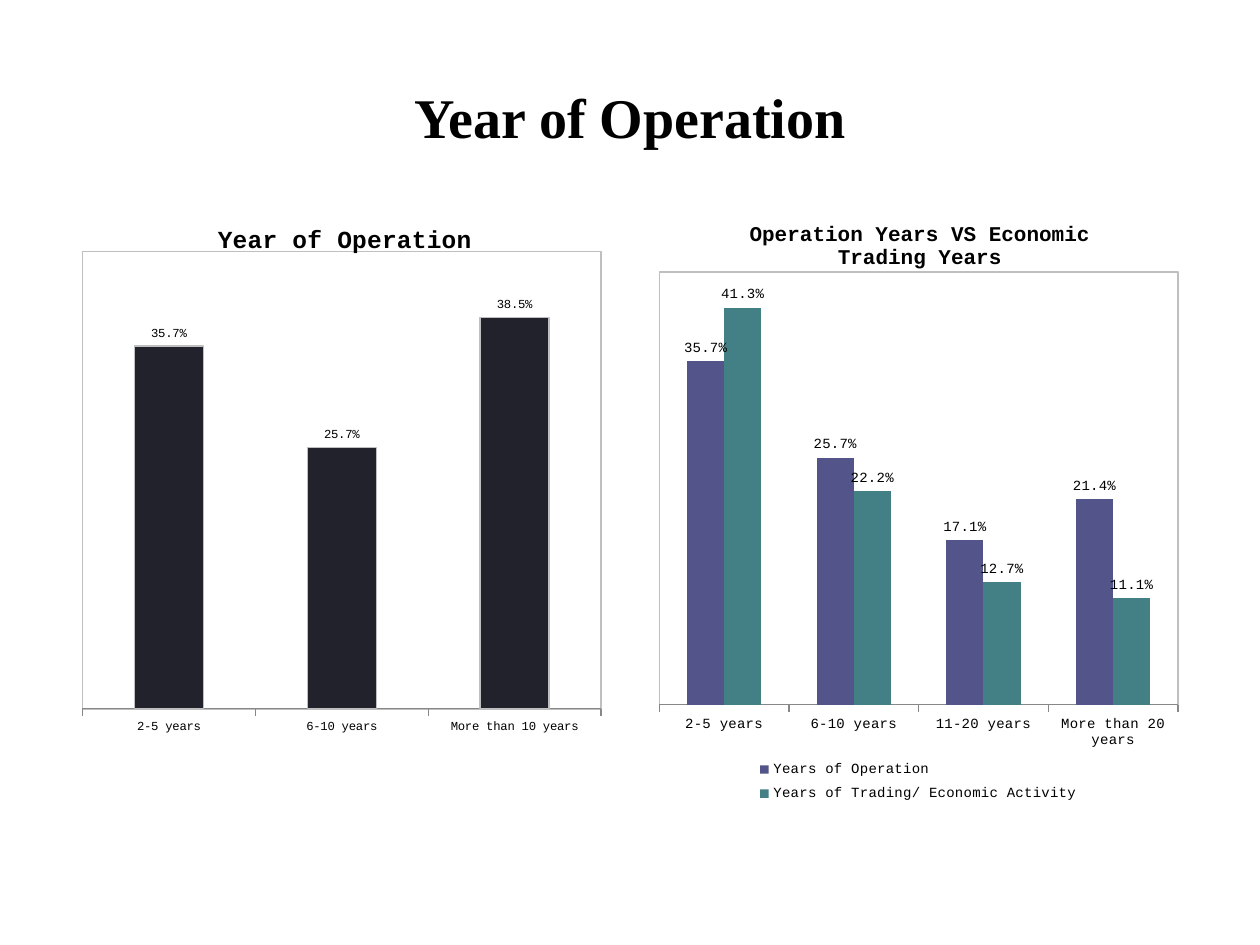
from lxml import etree
from pptx import Presentation
from pptx.chart.data import CategoryChartData
from pptx.dml.color import RGBColor
from pptx.enum.chart import XL_CHART_TYPE as ChartType, XL_LABEL_POSITION as LabelPos
from pptx.enum.chart import XL_LEGEND_POSITION as LegendPos, XL_TICK_MARK as TickMark
from pptx.enum.text import MSO_ANCHOR, PP_ALIGN
from pptx.oxml import parse_xml
from pptx.oxml.ns import nsdecls, qn
from pptx.util import Cm, Pt

COLORS = {"text": "000000", "border": "BFBFBF", "axis": "888888",
          "dark": "21222B", "indigo": "53548A", "teal": "438086"}
SERIF, MONO = "Times New Roman", "Courier New"


def rgb(name):
    return RGBColor.from_string(COLORS[name])


def set_font(font, size, name=MONO, bold=False):
    font.name, font.size, font.bold = name, Pt(size), bold
    font.color.rgb = rgb("text")


def add_text(tf, text, size, name=MONO, bold=False, align=PP_ALIGN.CENTER):
    p = tf.paragraphs[0]
    p.alignment = align
    r = p.add_run()
    r.text = text
    set_font(r.font, size, name, bold)


def set_layout(element, after, target=None, **box):
    for old in element.findall(qn("c:layout")):
        element.remove(old)
    layout = parse_xml(f"<c:layout {nsdecls('c')}><c:manualLayout/></c:layout>")
    modes = {"xMode": "edge", "yMode": "edge"}
    if target:
        modes = {"layoutTarget": target, **modes}
    for tag, val in {**modes, **box}.items():
        etree.SubElement(layout[0], qn(f"c:{tag}")).set("val", str(val))
    previous = element.find(qn(f"c:{after}")) if after else None
    if previous is None:
        element.insert(0, layout)
    else:
        previous.addnext(layout)


def frame_plot(plot_area):
    sp_pr = parse_xml(
        f"<c:spPr {nsdecls('c', 'a')}><a:noFill/><a:ln w='9525'><a:solidFill>"
        f"<a:srgbClr val='{COLORS['border']}'/></a:solidFill></a:ln></c:spPr>")
    plot_area.append(sp_pr)


def add_title(s, box, text):
    tf = s.shapes.add_textbox(*box).text_frame
    tf.word_wrap = True
    tf.vertical_anchor = MSO_ANCHOR.MIDDLE
    add_text(tf, text, 32, name=SERIF, bold=True)


def add_columns(s, box, title, title_size, title_at, size, plot_box, cats, series,
                outline=False, legend_box=None):
    data = CategoryChartData(number_format="0.0%")
    data.categories = cats
    for name, values, _ in series:
        data.add_series(name, values)
    chart = s.shapes.add_chart(ChartType.COLUMN_CLUSTERED, *box, data).chart
    set_font(chart.font, size)

    chart.has_title = True
    add_text(chart.chart_title.text_frame, title, title_size, bold=True)
    chart.chart_title.include_in_layout = False
    x, y = title_at
    set_layout(chart.element.find(".//" + qn("c:title")), "tx", x=x, y=y)

    plot = chart.plots[0]
    plot.gap_width, plot.overlap = 150, 0
    plot.vary_by_categories = False
    for ser, (_, _, color) in zip(plot.series, series):
        ser.format.fill.solid()
        ser.format.fill.fore_color.rgb = rgb(color)
        if outline:
            ser.format.line.color.rgb = rgb("border")
            ser.format.line.width = Pt(0.75)
        labels = ser.data_labels
        labels.show_value = True
        labels.number_format, labels.number_format_is_linked = "0.0%", False
        labels.position = LabelPos.OUTSIDE_END
        set_font(labels.font, size)

    cat = chart.category_axis
    cat.major_tick_mark = TickMark.OUTSIDE
    cat.format.line.color.rgb = rgb("axis")
    set_font(cat.tick_labels.font, size)
    val = chart.value_axis
    val.visible = val.has_major_gridlines = False
    val.minimum_scale, val.maximum_scale = 0, 0.45

    plot_area = chart.element.find(".//" + qn("c:plotArea"))
    set_layout(plot_area, None, target="inner", **plot_box)
    frame_plot(plot_area)

    chart.has_legend = legend_box is not None
    if legend_box:
        chart.legend.position = LegendPos.BOTTOM
        chart.legend.include_in_layout = False
        set_font(chart.legend.font, size)
        set_layout(chart.element.find(".//" + qn("c:legend")), "legendPos", **legend_box)


def main():
    prs = Presentation()
    prs.slide_width, prs.slide_height = Cm(25.4), Cm(19.05)
    s = prs.slides.add_slide(prs.slide_layouts[6])
    left, right, top, width = Cm(1.27), Cm(12.9), Cm(4.01), Cm(11.23)
    years = [0.357, 0.257]

    add_title(s, (left, Cm(0.76), Cm(22.86), Cm(3.18)), "Year of Operation")
    add_columns(s, (left, top, width, Cm(10.95)), "Year of Operation", 14, (0.27, 0.04), 7,
                dict(x=0.035, y=0.097, w=0.931, h=0.842),
                ["2-5 years", "6-10 years", "More than 10 years"],
                [("Series 1", years + [0.385], "dark")], outline=True)
    add_columns(s, (right, top, width, Cm(12.7)),
                "Operation Years VS Economic Trading Years", 12, (0.19, 0.03), 8,
                dict(x=0.035, y=0.116, w=0.931, h=0.687),
                ["2-5 years", "6-10 years", "11-20 years", "More than 20 years"],
                [("Years of Operation", years + [0.171, 0.214], "indigo"),
                 ("Years of Trading/ Economic Activity", [0.413, 0.222, 0.127, 0.111], "teal")],
                legend_box=dict(x=0.2, y=0.88, w=0.6, h=0.09))
    prs.save("out.pptx")


if __name__ == "__main__":
    main()
